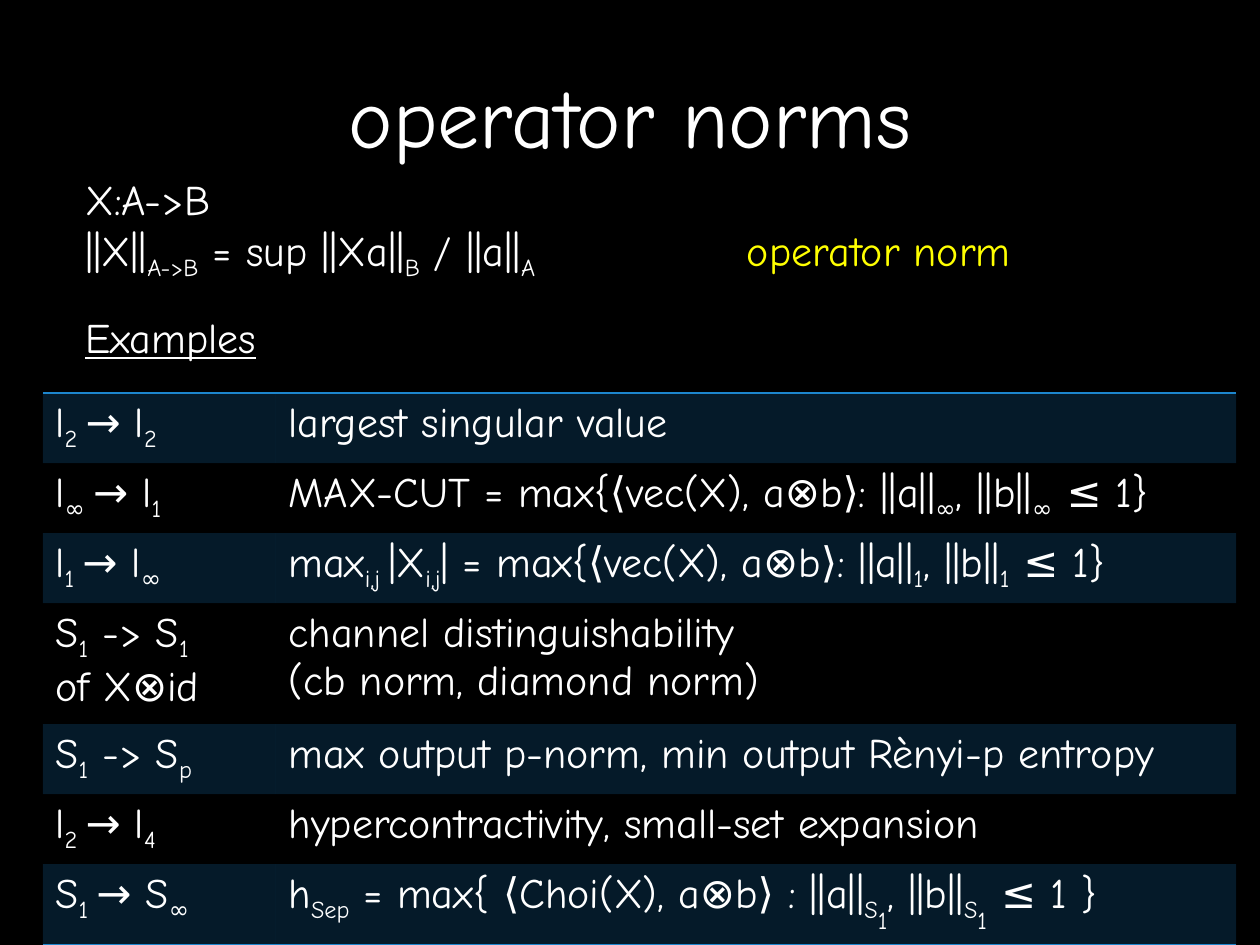
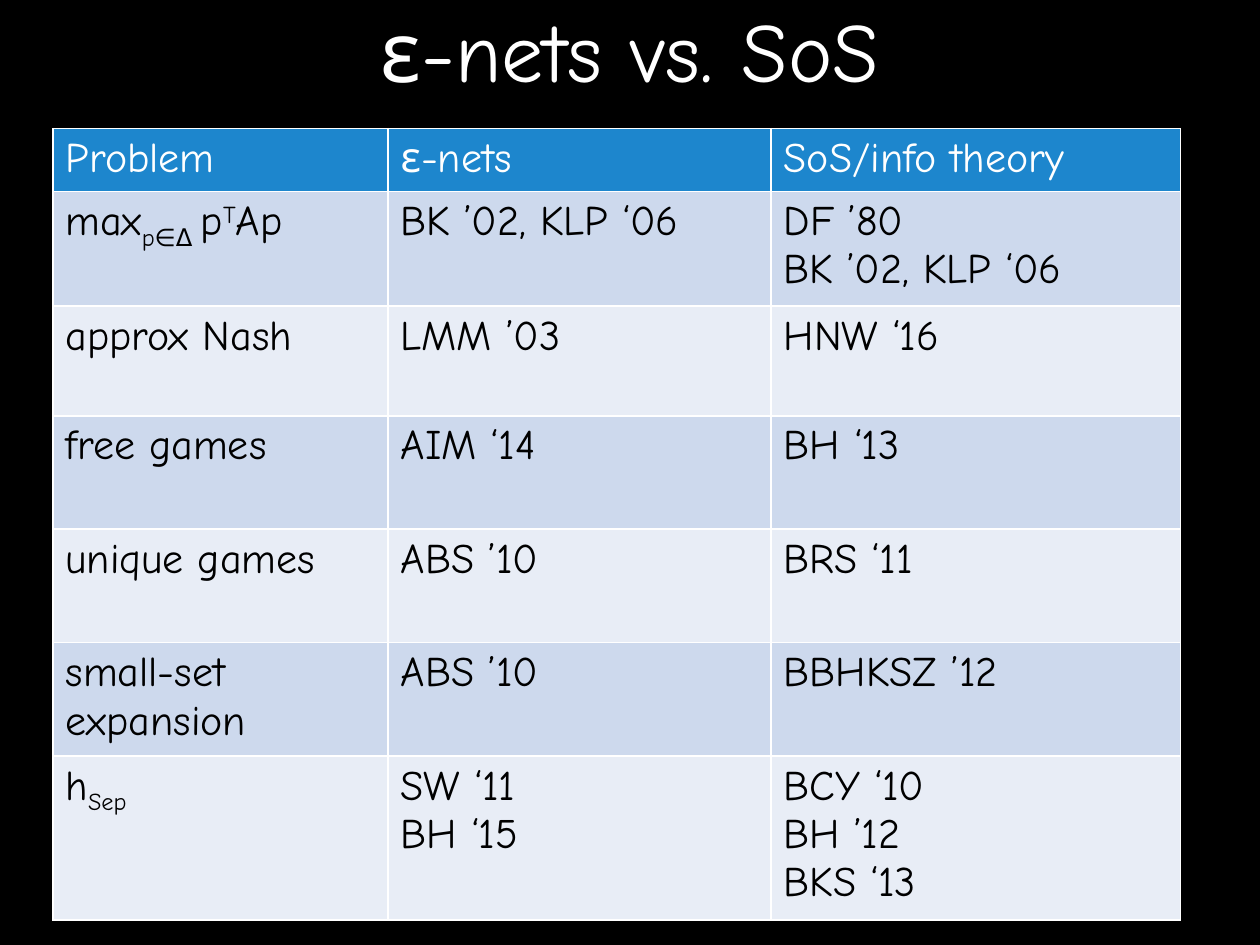
"""Build two slides on operator norms and on nets versus sum-of-squares results."""
from itertools import groupby

from lxml.etree import SubElement
from pptx import Presentation
from pptx.dml.color import RGBColor
from pptx.enum.text import MSO_ANCHOR, PP_ALIGN
from pptx.oxml.ns import qn
from pptx.util import Inches, Pt

NORMS_TITLE = "operator norms"
NORM_DEFINITION = [
    ("X:A->B\n||X||~A->B~ = sup ||Xa||~B~ / ||a||~A~\t", "WHITE"),
    ("operator norm", "YELLOW"),
]
EXAMPLES_HEADING = "Examples"
NORM_EXAMPLES = [
    ("l~2 ~→ l~2~", "largest singular value"),
    ("l~∞ ~→ l~1~", "MAX-CUT = max{⟨vec(X), a⊗b⟩: ||a||~∞~, ||b||~∞~ ≤ 1}"),
    ("l~1 ~→ l~∞~", "max~i,j ~|X~i,j~| = max{⟨vec(X), a⊗b⟩: ||a||~1~, ||b||~1~ ≤ 1}"),
    ("S~1~ -> S~1~\nof X⊗id", "channel distinguishability\n(cb norm, diamond norm)"),
    ("S~1~ -> S~p~", "max output p-norm, min output Rènyi-p entropy"),
    ("l~2 ~→ l~4~", "hypercontractivity, small-set expansion"),
    ("S~1 ~→ S~∞~", "h~Sep~ = max{ ⟨Choi(X), a⊗b⟩ : ||a||~S`1`, ||b||~S`1` ≤ 1 }"),
]
NETS_TITLE = "ε-nets vs. SoS"
NETS_RESULTS = [
    ("Problem", "ε-nets", "SoS/info theory"),
    ("max~p∈Δ ~p^T^Ap", "BK ’02, KLP ‘06", "DF ’80\nBK ’02, KLP ‘06"),
    ("approx Nash", "LMM ’03", "HNW ‘16"),
    ("free games", "AIM ‘14", "BH ‘13"),
    ("unique games", "ABS ’10", "BRS ‘11"),
    ("small-set expansion", "ABS ’10", "BBHKSZ ’12"),
    ("h~Sep~", "SW ‘11\nBH ‘15", "BCY ‘10\nBH ’12\nBKS ‘13"),
]

BLACK = RGBColor(0x00, 0x00, 0x00)
WHITE = RGBColor(0xFF, 0xFF, 0xFF)
YELLOW = RGBColor(0xFF, 0xFF, 0x00)
BLUE = RGBColor(0x1D, 0x86, 0xCD)
BANDS = (RGBColor(0xE8, 0xED, 0xF6), RGBColor(0xCD, 0xD9, 0xED))
INKS = {"WHITE": WHITE, "YELLOW": YELLOW}

FONT = "Comic Neue"
TITLE_SIZE, BODY_SIZE = 48, 24
BASELINES = {"~": -25, "`": -50, "^": 30}
PLAIN_TABLE = "{2D5ABB26-0587-4C30-8999-92F81FD0307C}"
BAND_OPACITY = 20


def shifted(text):
    """Yield each character with its baseline shift; a marker switches its shift on or off."""
    shift = 0
    for char in text:
        if char in BASELINES:
            shift = 0 if shift == BASELINES[char] else BASELINES[char]
        else:
            yield char, shift


def write(paragraph, text, color=WHITE, size=BODY_SIZE, **extra):
    """Add marked-up text to a paragraph as formatted runs."""
    look = {"name": FONT, "size": Pt(size), **extra}
    for (shift, is_break), chars in groupby(shifted(text), lambda c: (c[1], c[0] == "\n")):
        if is_break:
            paragraph.add_line_break()
            continue
        run = paragraph.add_run()
        run.text = "".join(char for char, _ in chars)
        for key, value in look.items():
            setattr(run.font, key, value)
        run.font.color.rgb = color
        if shift:
            run._r.get_or_add_rPr().set("baseline", str(shift * 1000))


def add_text(slide, left, top, width, height, anchor=MSO_ANCHOR.TOP):
    """Add a wrapped text box and return its first paragraph."""
    box = slide.shapes.add_textbox(*map(Inches, (left, top, width, height)))
    box.text_frame.word_wrap = True
    box.text_frame.vertical_anchor = anchor
    return box.text_frame.paragraphs[0]


def add_titled_slide(deck, title, top, height):
    """Add a black slide with a centred title."""
    slide = deck.slides.add_slide(deck.slide_layouts[6])
    slide.background.fill.solid()
    slide.background.fill.fore_color.rgb = BLACK
    heading = add_text(slide, 0.75, top, 8.5, height, MSO_ANCHOR.MIDDLE)
    heading.alignment = PP_ALIGN.CENTER
    write(heading, title, size=TITLE_SIZE)
    return slide


def add_border(cell, sides, color):
    """Draw one-point lines on the given sides, listed in L, R, T, B order."""
    for side in sides:
        line = SubElement(cell._tc.get_or_add_tcPr(), qn(f"a:ln{side}"), w=str(Pt(1)))
        SubElement(SubElement(line, qn("a:solidFill")), qn("a:srgbClr"), val=str(color))


def add_grid(slide, left, top, columns, heights, rows, style):
    """Add a table; style(row) gives ink, fill, opacity, border sides and border colour."""
    frame = slide.shapes.add_table(len(rows), len(columns), Inches(left), Inches(top),
                                   Inches(sum(columns)), Inches(sum(heights)))
    table = frame.table
    table.first_row = table.horz_banding = False
    table._tbl.tblPr.find(qn("a:tableStyleId")).text = PLAIN_TABLE
    for column, width in zip(table.columns, columns):
        column.width = Inches(width)
    for index, (row, height, texts) in enumerate(zip(table.rows, heights, rows)):
        row.height = Inches(height)
        ink, fill, opacity, sides, border = style(index)
        for cell, text in zip(row.cells, texts):
            write(cell.text_frame.paragraphs[0], text, ink)
            add_border(cell, sides, border)
            if fill is None:
                cell.fill.background()
                continue
            cell.fill.solid()
            cell.fill.fore_color.rgb = fill
            if opacity < 100:
                tint = cell._tc.tcPr.find(qn("a:solidFill"))[0]
                SubElement(tint, qn("a:alpha"), val=str(opacity * 1000))


def norm_style(row):
    """Tint every other row and rule off the top and bottom of the table."""
    sides = {0: "T", len(NORM_EXAMPLES) - 1: "B"}.get(row, "")
    return WHITE, None if row % 2 else BLUE, BAND_OPACITY, sides, BLUE


def nets_style(row):
    """Give a blue header over alternating pale bands, all ruled in white."""
    ink, fill = (BLACK, BANDS[row % 2]) if row else (WHITE, BLUE)
    return ink, fill, 100, "LRTB", WHITE


def build_norms(deck):
    """Build the operator norm slide."""
    slide = add_titled_slide(deck, NORMS_TITLE, 0.13, 1.56)
    definition = add_text(slide, 0.58, 1.33, 8.67, 0.91)
    stops = SubElement(definition._p.get_or_add_pPr(), qn("a:tabLst"))
    SubElement(stops, qn("a:tab"), pos=str(Inches(5.25)), algn="l")
    for text, ink in NORM_DEFINITION:
        write(definition, text, INKS[ink])
    heights = [0.96 if "\n" in norm else 0.55 for norm, _ in NORM_EXAMPLES]
    add_grid(slide, 0.34, 3.12, (1.85, 7.62), heights, NORM_EXAMPLES, norm_style)
    write(add_text(slide, 0.58, 2.42, 1.58, 0.5), EXAMPLES_HEADING, underline=True)


def build_nets(deck):
    """Build the comparison slide."""
    slide = add_titled_slide(deck, NETS_TITLE, -0.15, 1.07)
    heights = (0.49, 0.91, 0.87, 0.9, 0.9, 0.9, 1.25)
    add_grid(slide, 0.42, 1.02, (2.66, 3.04, 3.25), heights, NETS_RESULTS, nets_style)


def main():
    """Build and save the deck."""
    deck = Presentation()
    deck.slide_width, deck.slide_height = Inches(10), Inches(7.5)
    build_norms(deck)
    build_nets(deck)
    deck.save("out.pptx")


if __name__ == "__main__":
    main()
